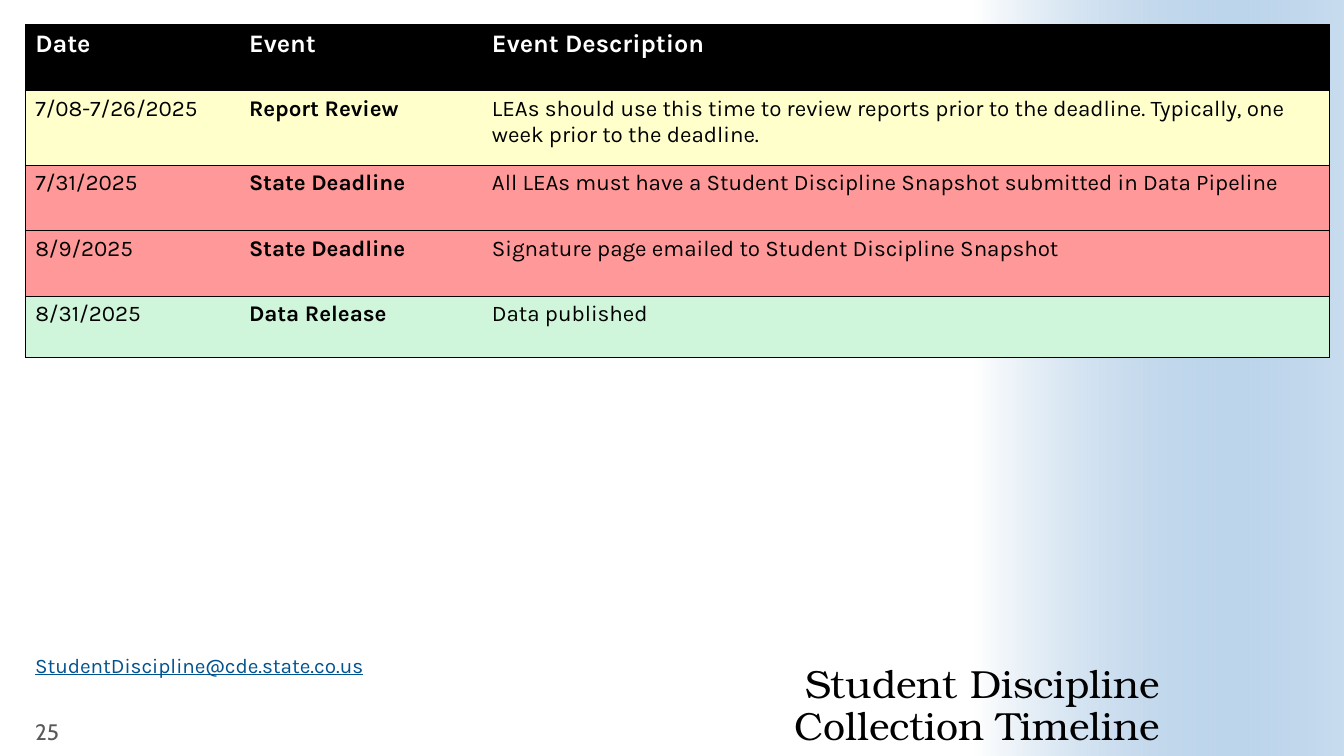
"""Build the Student Discipline collection timeline slide."""
from lxml.etree import SubElement as Sub
from pptx import Presentation
from pptx.dml.color import RGBColor
from pptx.enum.shapes import MSO_SHAPE as Shape
from pptx.enum.text import MSO_ANCHOR as Anchor, PP_ALIGN as Align
from pptx.oxml.ns import qn
from pptx.util import Inches, Pt


def add_run(para, text, font, size, color, bold=False):
    run = para.add_run()
    run.text = text
    run.font.name, run.font.size, run.font.bold = font, Pt(size), bold
    run.font.color.rgb = RGBColor.from_string(color)
    return run


def add_box(left, top, width, height, anchor):
    box = slide.shapes.add_textbox(*map(Inches, (left, top, width, height)))
    frame = box.text_frame
    frame.word_wrap, frame.vertical_anchor = True, anchor
    return frame


WIDE, HIGH, EDGE = 13.33, 7.5, 0.25
BODY = "Karla"
prs = Presentation()
prs.slide_width, prs.slide_height = Inches(WIDE), Inches(HIGH)
slide = prs.slides.add_slide(prs.slide_layouts[6])

band = 3.66
fade = slide.shapes.add_shape(Shape.RECTANGLE, Inches(WIDE - band), 0, Inches(band), Inches(HIGH))
fade.shadow.inherit = False
fade.line.fill.background()
fade.fill.gradient()
fade.fill.gradient_angle = 0
for stop, color in zip(fade.fill.gradient_stops, ("FFFFFF", "488BC9")):
    stop.color.rgb = RGBColor.from_string(color)
tint = list(fade._element.spPr.iter(qn("a:srgbClr")))[-1]
Sub(tint, qn("a:alpha"), val="30000")

title = add_box(4.26, 6.45, 7.24, 0.98, Anchor.BOTTOM)
title.margin_left = title.margin_right = title.margin_top = title.margin_bottom = 0
para = title.paragraphs[0]
para.alignment, para.line_spacing = Align.RIGHT, 0.9
add_run(para, "Student Discipline", "TeX Gyre Bonum", 28, "000000")
para.add_line_break()
add_run(para, "Collection Timeline", "TeX Gyre Bonum", 28, "000000")

page = add_box(EDGE, 7.1, 0.85, 0.31, Anchor.MIDDLE)
add_run(page.paragraphs[0], "25", "Cabin", 16, "595959")

mail = add_box(EDGE, 6.47, 3.89, 0.31, Anchor.TOP)
mail.paragraphs[0].line_spacing = 0.8
link = add_run(mail.paragraphs[0], "StudentDiscipline@cde.state.co.us", BODY, 14.8, "005390")
link.font.underline = True

cols = [2.12, 2.41, 8.4]
rows = [
    (0.66, "000000", "Date", "Event", "Event Description"),
    (0.74, "FFFFCC", "7/08-7/26/2025", "Report Review",
     "LEAs should use this time to review reports prior to the deadline. "
     "Typically, one week prior to the deadline."),
    (0.65, "FF9999", "7/31/2025", "State Deadline",
     "All LEAs must have a Student Discipline Snapshot submitted in Data Pipeline"),
    (0.65, "FF9999", "8/9/2025", "State Deadline",
     "Signature page emailed to Student Discipline Snapshot"),
    (0.61, "CFF5DA", "8/31/2025", "Data Release", "Data published"),
]
tall = sum(row[0] for row in rows)
table = slide.shapes.add_table(len(rows), len(cols), Inches(EDGE), Inches(0.24),
                               Inches(sum(cols)), Inches(tall)).table
for col, width in zip(table.columns, cols):
    col.width = Inches(width)
for r, (height, fill, *texts) in enumerate(rows):
    table.rows[r].height = Inches(height)
    head = r == 0
    for c, text in enumerate(texts):
        cell = table.cell(r, c)
        props = cell._tc.get_or_add_tcPr()
        drawn = {"L": c == 0, "R": c == len(cols) - 1, "T": True, "B": True}
        for side, shown in drawn.items():
            line = Sub(props, qn(f"a:ln{side}"), w=str(Pt(0.5)))
            if shown:
                Sub(Sub(line, qn("a:solidFill")), qn("a:srgbClr"), val="000000")
            else:
                Sub(line, qn("a:noFill"))
        cell.fill.solid()
        cell.fill.fore_color.rgb = RGBColor.from_string(fill)
        add_run(cell.text_frame.paragraphs[0], text, BODY, 18 if head else 16,
                "FFFFFF" if head else "000000", head or c == 1)

prs.save("out.pptx")
